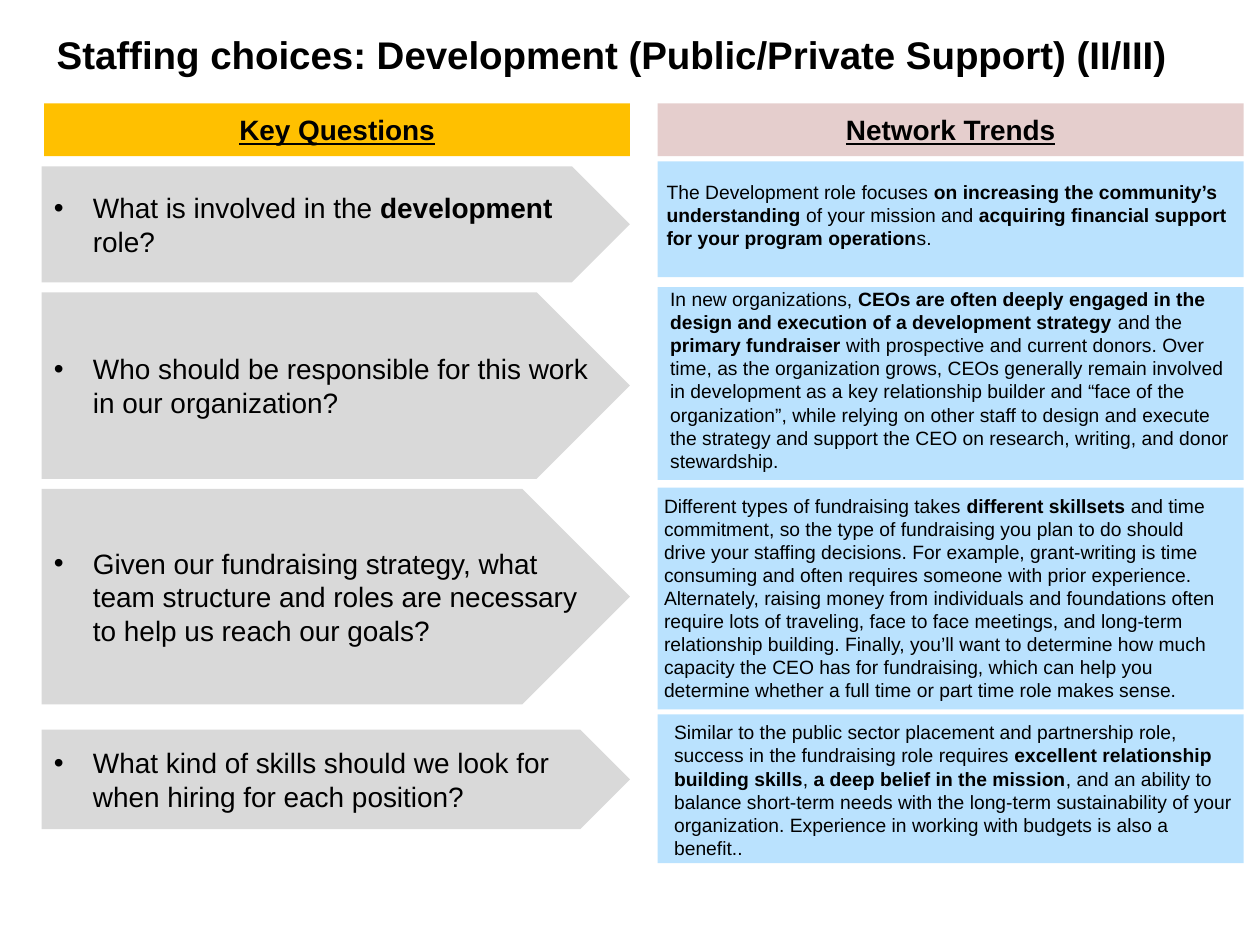
"""Build a slide pairing key staffing questions with network trends."""
from dataclasses import dataclass

from lxml.etree import SubElement
from pptx import Presentation
from pptx.dml.color import RGBColor
from pptx.enum.shapes import MSO_SHAPE as Shape
from pptx.enum.text import MSO_ANCHOR as Anchor, PP_ALIGN as Align
from pptx.oxml.ns import qn
from pptx.util import Inches, Pt


@dataclass(frozen=True)
class Theme:
    font: str = "Arial"
    ink: str = "000000"
    arrow: str = "D9D9D9"
    trend: str = "BAE2FE"
    questions: str = "FFC000"
    trends: str = "E5CECD"
    title_size: int = 22
    question_size: int = 16
    trend_size: int = 11


THEME = Theme()
TITLE = "Staffing choices: Development (Public/Private Support) (II/III)"
QUESTION_LEFT, QUESTION_WIDTH = 0.33, 4.67
TREND_LEFT, TREND_WIDTH = 5.22, 4.65
HEADER_TOP, HEADER_HEIGHT = 0.82, 0.42
BULLET_INDENT = 0.31

HEADERS = [
    ("Key Questions", 0.35, THEME.questions),
    ("Network Trends", TREND_LEFT, THEME.trends),
]
QUESTIONS = [
    (1.32, 0.92, "What is involved in the **development** role?"),
    (2.32, 1.48, "Who should be responsible for this work in our organization?"),
    (3.88, 1.71, "Given our fundraising strategy, what team structure and roles "
     "are necessary to help us reach our goals?"),
    (5.79, 0.79, "What kind of skills should we look for when hiring for each position?"),
]
TRENDS = [
    dict(top=1.28, height=0.92, inset=(0.07, 0.15), measure=4.45, text=(
        "The Development role focuses **on increasing the community’s understanding "
        "**of your mission and **acquiring financial support for your program "
        "operation**s.")),
    dict(top=2.28, height=1.53, inset=(0.1, 0), measure=4.5, text=(
        "In new organizations, **CEOs are often deeply engaged in the design and "
        "execution of a development strategy **and the **primary fundraiser **with "
        "prospective and current donors. Over time, as the organization grows, CEOs "
        "generally remain involved in development as a key relationship builder and "
        "“face of the organization”, while relying on other staff to design and "
        "execute the strategy and support the CEO on research, writing, and donor "
        "stewardship.")),
    dict(top=3.87, height=1.76, inset=(0.05, 0.05), measure=4.5, text=(
        "Different types of fundraising takes **different skillsets **and time "
        "commitment, so the type of fundraising you plan to do should drive your "
        "staffing decisions. For example, grant-writing is time consuming and often "
        "requires someone with prior experience. Alternately, raising money from "
        "individuals and foundations often require lots of traveling, face to face "
        "meetings, and long-term relationship building. Finally, you’ll want to "
        "determine how much capacity the CEO has for fundraising, which can help you "
        "determine whether a full time or part time role makes sense.")),
    dict(top=5.67, height=1.18, inset=(0.13, 0.05), measure=4.5, text=(
        "Similar to the public sector placement and partnership role, success in the "
        "fundraising role requires **excellent relationship building skills**, **a "
        "deep belief in the mission**, and an ability to balance short-term needs "
        "with the long-term sustainability of your organization. Experience in "
        "working with budgets is also a benefit..")),
]


def add_block(page, kind, left, top, width, height, fill):
    block = page.shapes.add_shape(
        kind, Inches(left), Inches(top), Inches(width), Inches(height))
    block.shadow.inherit = False
    block.fill.solid()
    block.fill.fore_color.rgb = RGBColor.from_string(fill)
    block.line.fill.background()
    return block


def write(box, text, size, bold=False, underline=False, bullet=False,
          align=Align.LEFT, anchor=Anchor.MIDDLE, insets=(0.1, 0, 0.1, 0)):
    frame = box.text_frame
    frame.word_wrap = True
    frame.vertical_anchor = anchor
    frame.margin_left, frame.margin_top, frame.margin_right, frame.margin_bottom = map(
        Inches, insets)
    para = frame.paragraphs[0]
    para.alignment = align
    if bullet:
        settings = para._p.get_or_add_pPr()
        settings.set("marL", str(Inches(BULLET_INDENT)))
        settings.set("indent", str(-Inches(BULLET_INDENT)))
        SubElement(settings, qn("a:buFont"), typeface=THEME.font)
        SubElement(settings, qn("a:buChar"), char="•")
    for index, part in enumerate(text.split("**")):
        span = para.add_run()
        span.text = part
        font = span.font
        font.name, font.size = THEME.font, Pt(size)
        font.bold, font.underline = bold or index % 2 == 1, underline
        font.color.rgb = RGBColor.from_string(THEME.ink)


def main():
    deck = Presentation()
    deck.slide_width, deck.slide_height = Inches(10), Inches(7.5)
    page = deck.slides.add_slide(deck.slide_layouts[5])

    title = page.shapes.title
    title.left, title.top, title.width, title.height = map(
        Inches, (0.35, 0.06, 9.29, 0.6))
    write(title, TITLE, THEME.title_size, bold=True, anchor=Anchor.BOTTOM,
          insets=(0.1, 0.05, 0.1, 0.05))

    for text, left, fill in HEADERS:
        header = add_block(page, Shape.RECTANGLE, left, HEADER_TOP, TREND_WIDTH,
                           HEADER_HEIGHT, fill)
        write(header, text, THEME.question_size, bold=True, underline=True,
              align=Align.CENTER)

    for top, height, text in QUESTIONS:
        area = (QUESTION_LEFT, top, QUESTION_WIDTH, height)
        add_block(page, Shape.PENTAGON, *area, THEME.arrow)
        box = page.shapes.add_textbox(*map(Inches, area))
        write(box, text, THEME.question_size, bullet=True, insets=(0.1, 0, 0.25, 0))

    for trend in TRENDS:
        panel = add_block(page, Shape.RECTANGLE, TREND_LEFT, trend["top"],
                          TREND_WIDTH, trend["height"], THEME.trend)
        left, top = trend["inset"]
        right = TREND_WIDTH - left - trend["measure"]
        write(panel, trend["text"], THEME.trend_size, anchor=Anchor.TOP,
              insets=(left, top, right, 0))

    deck.save("out.pptx")


if __name__ == "__main__":
    main()
